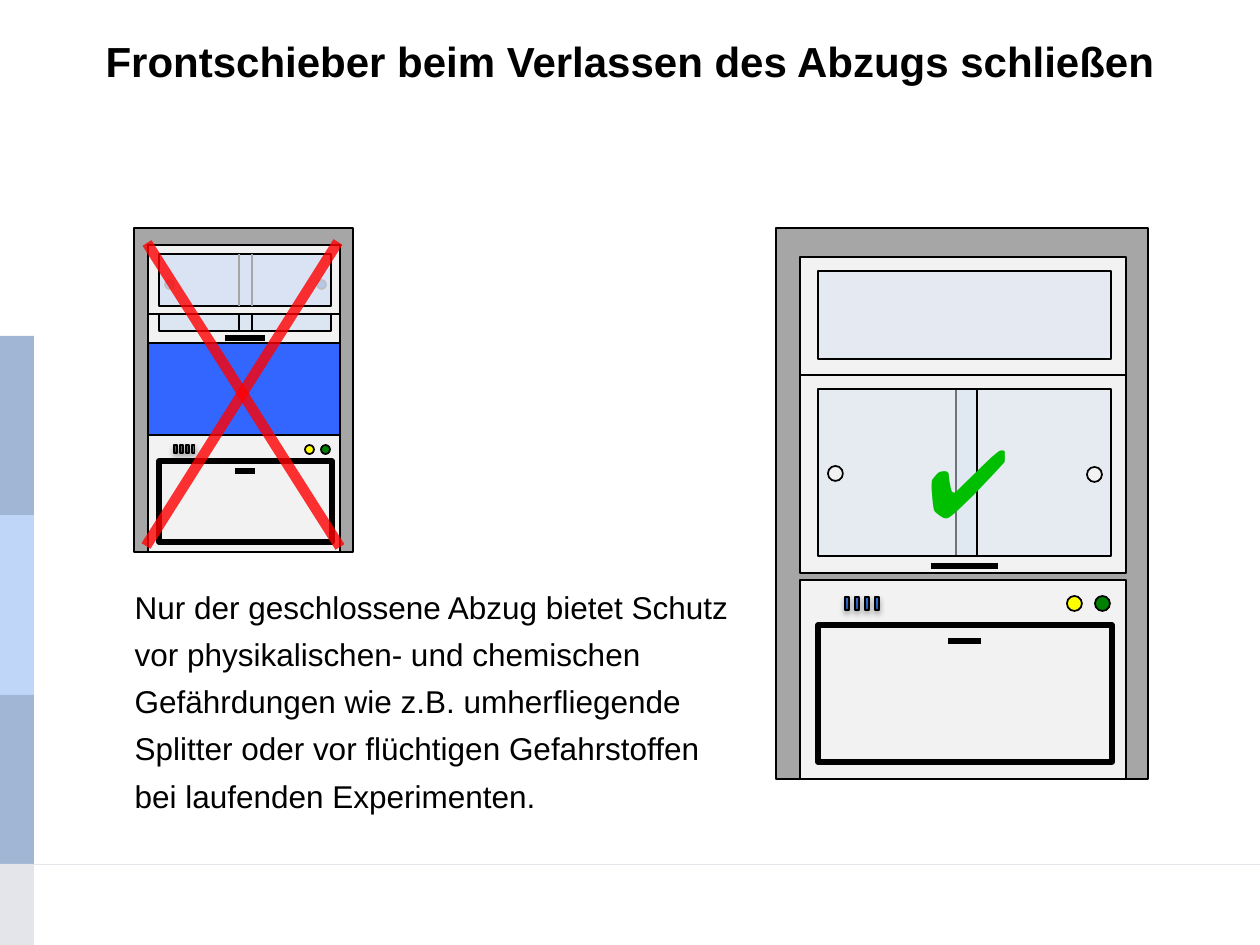
from dataclasses import dataclass

from lxml.etree import SubElement
from pptx import Presentation
from pptx.dml.color import RGBColor
from pptx.enum.shapes import MSO_CONNECTOR, MSO_SHAPE
from pptx.enum.text import MSO_ANCHOR, MSO_AUTO_SIZE, PP_ALIGN
from pptx.oxml.ns import qn
from pptx.util import Emu, Pt

EMU_PER_PX = 914400 / 126


@dataclass(frozen=True)
class Theme:
    font: str = "Arial"
    title_size: int = 24
    body_size: int = 18
    check_size: int = 54
    black: str = "000000"
    frame: str = "A6A6A6"
    panel: str = "F2F2F2"
    glass: str = "DAE3F3"
    sash_glass: str = "DCE6F2"
    opening: str = "3366FF"
    green: str = "008000"
    yellow: str = "FFFF00"
    check: str = "00BE00"
    cross: str = "FF0000"
    hidden_knob: str = "B4C7E7"
    hidden_edge: str = "BFBFBF"
    vent_dark: str = "2451A1"
    vent_light: str = "2F69D1"
    stripe: str = "A1B6D4"
    stripe_light: str = "BFD6F8"
    stripe_gray: str = "E4E5EA"


THEME = Theme()


@dataclass(frozen=True)
class Box:
    x: int
    y: int
    w: int
    h: int

    def emu(self) -> list[Emu]:
        return [px(n) for n in (self.x, self.y, self.w, self.h)]


@dataclass(frozen=True)
class Stroke:
    x1: int
    y1: int
    x2: int
    y2: int


@dataclass(frozen=True)
class Hood:
    frame: Box
    cabinet: Box
    door: Box
    door_handle: Stroke
    sash: Box
    sash_panes: tuple[Box, Box]
    sash_handle: Stroke
    upper: Box
    upper_pane: Box
    lamps: tuple[Box, Box]
    first_vent: Box
    vent_pitch: int
    knobs: tuple[Box, Box]
    glass_opacity: int


OPEN_HOOD = Hood(
    frame=Box(134, 228, 219, 324), cabinet=Box(148, 435, 192, 117),
    door=Box(159, 461, 173, 81), door_handle=Stroke(235, 471, 255, 471),
    sash=Box(148, 247, 192, 96),
    sash_panes=(Box(159, 247, 93, 84), Box(239, 247, 92, 84)),
    sash_handle=Stroke(225, 338, 265, 338),
    upper=Box(148, 245, 192, 69), upper_pane=Box(159, 254, 172, 52),
    lamps=(Box(321, 445, 9, 9), Box(305, 445, 9, 9)),
    first_vent=Box(174, 445, 3, 8), vent_pitch=6,
    knobs=(Box(317, 280, 9, 9), Box(165, 280, 9, 9)), glass_opacity=100)

CLOSED_HOOD = Hood(
    frame=Box(776, 228, 372, 551), cabinet=Box(800, 580, 326, 199),
    door=Box(818, 625, 294, 137), door_handle=Stroke(948, 641, 981, 641),
    sash=Box(800, 372, 326, 201),
    sash_panes=(Box(956, 389, 155, 167), Box(818, 389, 159, 167)),
    sash_handle=Stroke(931, 566, 998, 566),
    upper=Box(800, 257, 326, 118), upper_pane=Box(818, 271, 293, 88),
    lamps=(Box(1095, 596, 15, 15), Box(1067, 596, 15, 15)),
    first_vent=Box(845, 597, 4, 13), vent_pitch=10,
    knobs=(Box(1087, 467, 15, 15), Box(828, 466, 15, 15)), glass_opacity=50)

CROSS = (Stroke(146, 546, 338, 242), Stroke(340, 547, 147, 243))


def px(n: int) -> Emu:
    return Emu(round(n * EMU_PER_PX))


def rgb(code: str) -> RGBColor:
    return RGBColor.from_string(code)


def fade(item, opacity: int) -> None:
    if opacity < 100:
        color = next(item.element.spPr.iter(qn("a:srgbClr")))
        SubElement(color, qn("a:alpha"), val=str(opacity * 1000))


def draw_box(canvas, box: Box, fill: str, edge: str | None = THEME.black,
             weight: float = 1, opacity: int = 100, kind=MSO_SHAPE.RECTANGLE):
    panel = canvas.add_shape(kind, *box.emu())
    panel.shadow.inherit = False
    panel.fill.solid()
    panel.fill.fore_color.rgb = rgb(fill)
    fade(panel, opacity)
    if edge:
        panel.line.color.rgb = rgb(edge)
        panel.line.width = Pt(weight)
    else:
        panel.line.fill.background()
    return panel


def draw_line(canvas, stroke: Stroke, color: str = THEME.black,
              weight: float = 1, opacity: int = 100) -> None:
    ends = [px(n) for n in (stroke.x1, stroke.y1, stroke.x2, stroke.y2)]
    line = canvas.add_connector(MSO_CONNECTOR.STRAIGHT, *ends)
    line.line.color.rgb = rgb(color)
    line.line.width = Pt(weight)
    fade(line, opacity)
    SubElement(line.element.spPr, qn("a:effectLst"))


def draw_vents(canvas, hood: Hood) -> None:
    first = hood.first_vent
    for i in range(4):
        slot = Box(first.x + i * hood.vent_pitch, first.y, first.w, first.h)
        vent = draw_box(canvas, slot, THEME.vent_light, weight=0.75)
        vent.fill.gradient()
        vent.fill.gradient_angle = 90
        dark, light = vent.fill.gradient_stops
        dark.color.rgb, dark.position = rgb(THEME.vent_dark), 0
        light.color.rgb, light.position = rgb(THEME.vent_light), 0.8
        effects = vent.element.spPr.find(qn("a:effectLst"))
        shadow = SubElement(effects, qn("a:outerShdw"), blurRad="40000",
                            dist="23000", dir="5400000", rotWithShape="0")
        color = SubElement(shadow, qn("a:srgbClr"), val=THEME.black)
        SubElement(color, qn("a:alpha"), val="35000")


def draw_knobs(canvas, hood: Hood, fill: str, edge: str) -> None:
    for knob in hood.knobs:
        draw_box(canvas, knob, fill, edge, kind=MSO_SHAPE.OVAL)


def draw_hood(canvas, hood: Hood) -> None:
    draw_box(canvas, hood.frame, THEME.frame)
    draw_box(canvas, hood.cabinet, THEME.panel)
    draw_box(canvas, hood.door, THEME.panel, weight=3)
    draw_line(canvas, hood.door_handle, weight=3)
    draw_box(canvas, hood.sash, THEME.panel)
    for pane in hood.sash_panes:
        draw_box(canvas, pane, THEME.sash_glass, opacity=hood.glass_opacity)
    left = min(hood.sash_panes, key=lambda pane: pane.x)
    edge = left.x + left.w
    draw_line(canvas, Stroke(edge, left.y, edge, left.y + left.h))
    draw_line(canvas, hood.sash_handle, weight=3)
    draw_box(canvas, hood.upper, THEME.panel)
    draw_box(canvas, hood.upper_pane, THEME.glass, opacity=hood.glass_opacity)
    for lamp, color in zip(hood.lamps, (THEME.green, THEME.yellow)):
        draw_box(canvas, lamp, color, kind=MSO_SHAPE.OVAL)
    draw_vents(canvas, hood)


def write(holder, box: Box, lines: list[str], size: int, color: str = THEME.black,
          bold: bool = False, align=PP_ALIGN.LEFT, spacing: float = 1) -> None:
    holder.left, holder.top, holder.width, holder.height = box.emu()
    frame = holder.text_frame
    frame.word_wrap = True
    frame.auto_size = MSO_AUTO_SIZE.NONE
    frame.vertical_anchor = MSO_ANCHOR.TOP
    frame.text = "\n".join(lines)
    for paragraph in frame.paragraphs:
        props = paragraph._p.get_or_add_pPr()
        props.set("marL", "0")
        props.set("indent", "0")
        SubElement(props, qn("a:buNone"))
        paragraph.alignment = align
        paragraph.line_spacing = spacing
        paragraph.space_before = Pt(0)
        font = paragraph.font
        font.name, font.size, font.bold = THEME.font, Pt(size), bold
        font.color.rgb = rgb(color)


def main() -> None:
    deck = Presentation()
    deck.slide_width, deck.slide_height = px(1260), px(945)
    slide = deck.slides.add_slide(deck.slide_layouts[1])
    title, body = slide.placeholders

    rail = slide.shapes.add_group_shape().shapes
    draw_line(rail, Stroke(0, 864, 1260, 864), THEME.stripe_gray, 0.5)
    tops = (336, 515, 695, 864, 945)
    tints = (THEME.stripe, THEME.stripe_light, THEME.stripe, THEME.stripe_gray)
    for top, bottom, tint in zip(tops, tops[1:], tints):
        draw_box(rail, Box(0, top, 34, bottom - top), tint, None)

    wrong = slide.shapes.add_group_shape().shapes
    draw_hood(wrong, OPEN_HOOD)
    draw_box(wrong, Box(148, 343, 192, 92), THEME.opening)
    for x in (239, 252):
        draw_line(wrong, Stroke(x, 254, x, 306), THEME.frame)
    draw_knobs(wrong, OPEN_HOOD, THEME.hidden_knob, THEME.hidden_edge)
    for bar in CROSS:
        draw_line(wrong, bar, THEME.cross, 6, 80)

    draw_hood(slide.shapes, CLOSED_HOOD)
    draw_knobs(slide.shapes, CLOSED_HOOD, THEME.panel, THEME.black)
    check = Box(915, 417, 121, 127)
    write(slide.shapes.add_textbox(*check.emu()), check, ["✔"],
          THEME.check_size, THEME.check)

    write(title, Box(0, 29, 1260, 93),
          ["Frontschieber beim Verlassen des Abzugs schließen"],
          THEME.title_size, bold=True, align=PP_ALIGN.CENTER)
    write(body, Box(122, 572, 620, 238),
          ["Nur der geschlossene Abzug bietet Schutz",
           "vor physikalischen- und chemischen",
           "Gefährdungen wie z.B. umherfliegende \vSplitter oder vor flüchtigen "
           "Gefahrstoffen bei laufenden Experimenten."],
          THEME.body_size, spacing=1.25)

    deck.save("out.pptx")


if __name__ == "__main__":
    main()
